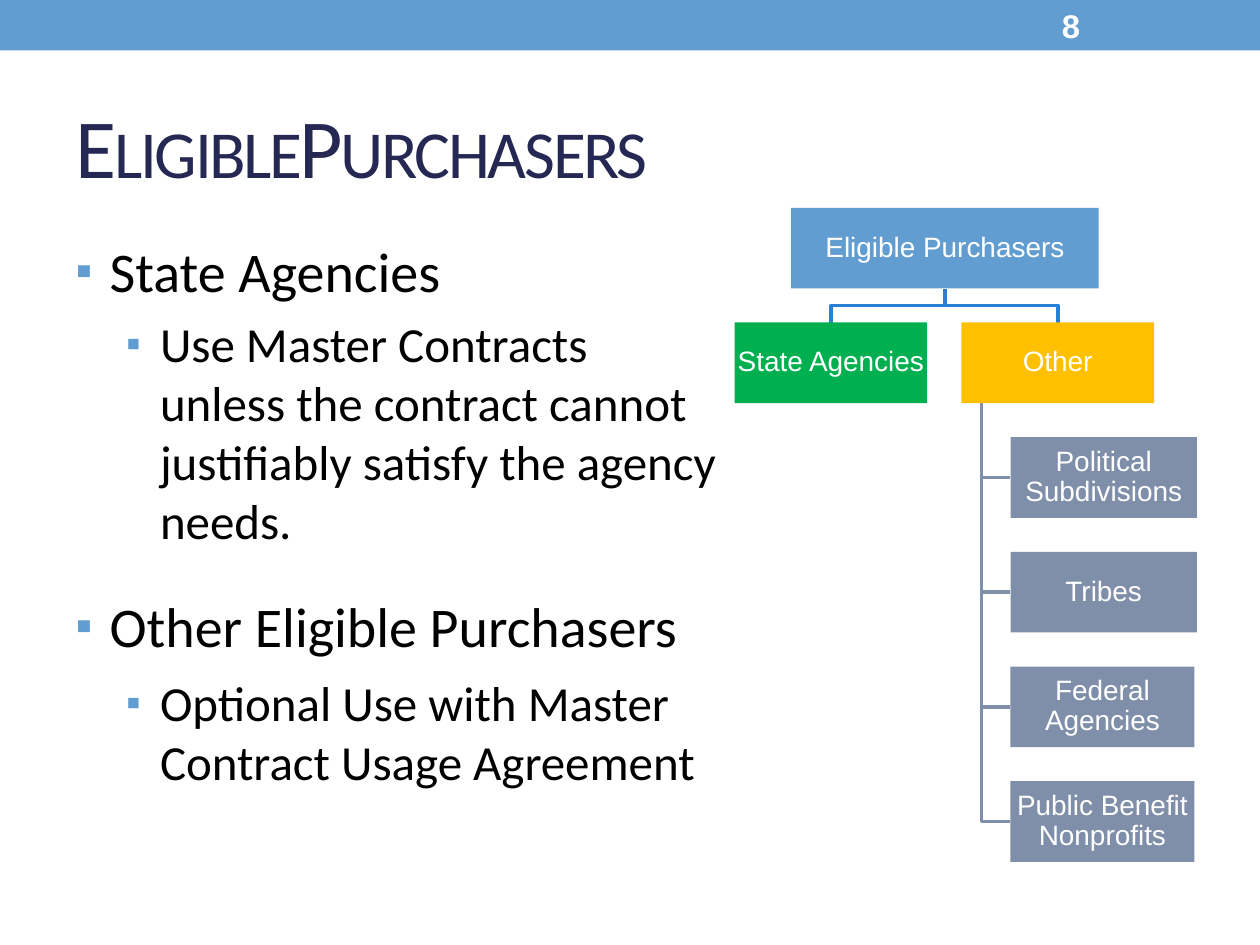
from typing import NamedTuple

from lxml import etree
from pptx import Presentation
from pptx import util as u
from pptx.dml.color import RGBColor
from pptx.enum import shapes, text
from pptx.oxml.ns import qn

BLUE = RGBColor(0x62, 0x9D, 0xD1)
DEEP_BLUE = RGBColor(0x29, 0x7F, 0xD5)
NAVY = RGBColor(0x24, 0x28, 0x52)
GREEN = RGBColor(0x00, 0xB0, 0x50)
AMBER = RGBColor(0xFF, 0xC0, 0x00)
SLATE = RGBColor(0x7F, 0x8F, 0xA9)
BLACK = RGBColor(0, 0, 0)
WHITE = RGBColor(255, 255, 255)

# Chart grid, in inches: every row has the same height and pitch
ROW_TOP, ROW_PITCH, BOX_H = 1.65, 0.91, 0.64
TRUNK_X = 7.79


class Box(NamedTuple):
    label: str
    row: int
    left: float
    width: float
    fill: RGBColor

    @property
    def top(self) -> float:
        return ROW_TOP + self.row * ROW_PITCH

    @property
    def bottom(self) -> float:
        return self.top + BOX_H

    @property
    def center(self) -> float:
        return self.left + self.width / 2

    @property
    def middle(self) -> float:
        return self.top + BOX_H / 2


class Bullet(NamedTuple):
    label: str
    level: int
    size: int
    indent: float
    before: int | None = None


ROOT = Box("Eligible Purchasers", 0, 6.28, 2.44, BLUE)
STATE = Box("State Agencies", 1, 5.83, 1.53, GREEN)
OTHER = Box("Other", 1, 7.63, 1.53, AMBER)
MEMBERS = [
    Box(label, row, 8.02, width, SLATE)
    for row, (label, width) in enumerate(
        [("Political Subdivisions", 1.48), ("Tribes", 1.48),
         ("Federal Agencies", 1.46), ("Public Benefit Nonprofits", 1.46)], start=2)
]
BULLETS = [
    Bullet("State Agencies", 0, 32, 0.27),
    Bullet("Use Master Contracts unless the contract cannot justifiably "
           "satisfy the agency needs.", 1, 28, 0.67),
    Bullet("Other Eligible Purchasers", 0, 32, 0.27, 24),
    Bullet("Optional Use with Master Contract Usage Agreement", 1, 28, 0.67, 8),
]


def place(sp, left: float, top: float, width: float, height: float) -> None:
    sp.left, sp.top = u.Inches(left), u.Inches(top)
    sp.width, sp.height = u.Inches(width), u.Inches(height)


def add_run(p, label: str, font: str, size: float, color: RGBColor):
    r = p.add_run()
    r.text = label
    r.font.name, r.font.size = font, u.Pt(size)
    r.font.color.rgb = color
    return r


def add_rect(slide, left: float, top: float, width: float, height: float, fill: RGBColor):
    sp = slide.shapes.add_shape(
        shapes.MSO_SHAPE.RECTANGLE, *map(u.Inches, (left, top, width, height)))
    sp.shadow.inherit = False
    sp.fill.solid()
    sp.fill.fore_color.rgb = fill
    sp.line.fill.background()
    return sp


def add_box(slide, box: Box) -> None:
    sp = add_rect(slide, box.left, box.top, box.width, BOX_H, box.fill)
    tf = sp.text_frame
    tf.word_wrap = True
    tf.vertical_anchor = text.MSO_ANCHOR.MIDDLE
    tf.margin_left = tf.margin_right = tf.margin_top = tf.margin_bottom = u.Inches(0.01)
    p = tf.paragraphs[0]
    p.alignment = text.PP_ALIGN.CENTER
    p.line_spacing = 0.9
    add_run(p, box.label, "Arial", 16, WHITE)


def add_elbow(slide, points: list[tuple[float, float]], color: RGBColor) -> None:
    start, *rest = [(u.Inches(x), u.Inches(y)) for x, y in points]
    builder = slide.shapes.build_freeform(*start)
    builder.add_line_segments(rest, close=False)
    sp = builder.convert_to_shape()
    sp.shadow.inherit = False
    sp.fill.background()
    sp.line.color.rgb = color
    sp.line.width = u.Pt(2.08)


def set_bullet(p, indent: float) -> None:
    pPr = p._p.get_or_add_pPr()
    pPr.set("marL", str(u.Inches(indent)))
    pPr.set("indent", str(u.Inches(-0.27)))
    color = etree.SubElement(pPr, qn("a:buClr"))
    etree.SubElement(color, qn("a:srgbClr")).set("val", str(BLUE))
    etree.SubElement(pPr, qn("a:buSzPct")).set("val", "85000")
    etree.SubElement(pPr, qn("a:buFont")).set("typeface", "Arial")
    etree.SubElement(pPr, qn("a:buChar")).set("char", "▪")


def fill_title(sp) -> None:
    place(sp, 0.5, 0.58, 9, 1.08)
    sp.text_frame.vertical_anchor = text.MSO_ANCHOR.MIDDLE
    p = sp.text_frame.paragraphs[0]
    p.alignment = text.PP_ALIGN.LEFT
    for label, size in (("Eligible", 48), (" ", 53.3), ("Purchasers", 48)):
        rPr = add_run(p, label, "Calibri", size, NAVY).font._element
        rPr.set("cap", "small")
        rPr.set("spc", "-130")


def fill_body(sp) -> None:
    place(sp, 0.5, 1.83, 5.33, 5.09)
    tf = sp.text_frame
    tf.auto_size = text.MSO_AUTO_SIZE.NONE
    for i, bullet in enumerate(BULLETS):
        p = tf.add_paragraph() if i else tf.paragraphs[0]
        p.level = bullet.level
        if bullet.before is not None:
            p.space_before = u.Pt(bullet.before)
        set_bullet(p, bullet.indent)
        add_run(p, bullet.label, "Calibri", bullet.size, BLACK)


def add_chart_tree(slide) -> None:
    for member in reversed(MEMBERS):
        add_elbow(slide, [(TRUNK_X, OTHER.bottom), (TRUNK_X, member.middle),
                          (member.left, member.middle)], SLATE)
    fork = (ROOT.bottom + OTHER.top) / 2
    for child in (OTHER, STATE):
        add_elbow(slide, [(ROOT.center, ROOT.bottom), (ROOT.center, fork),
                          (child.center, fork), (child.center, child.top)], DEEP_BLUE)
    for box in (ROOT, STATE, OTHER, *MEMBERS):
        add_box(slide, box)


def add_page_number(slide) -> None:
    sp = slide.shapes.add_textbox(*map(u.Inches, (8.33, 0.02, 1.17, 0.36)))
    tf = sp.text_frame
    tf.word_wrap = True
    tf.vertical_anchor = text.MSO_ANCHOR.MIDDLE
    add_run(tf.paragraphs[0], "8", "Arial", 18.7, WHITE).font.bold = True


def main() -> None:
    prs = Presentation()
    prs.slide_width, prs.slide_height = u.Inches(10), u.Inches(7.5)
    slide = prs.slides.add_slide(prs.slide_layouts[1])
    band = add_rect(slide, 0, 0, 10, 0.4, BLUE)
    slide.shapes._spTree.insert(2, band._element)  # behind the placeholders
    fill_title(slide.shapes.title)
    fill_body(slide.placeholders[1])
    add_chart_tree(slide)
    add_page_number(slide)
    prs.save("out.pptx")


if __name__ == "__main__":
    main()
